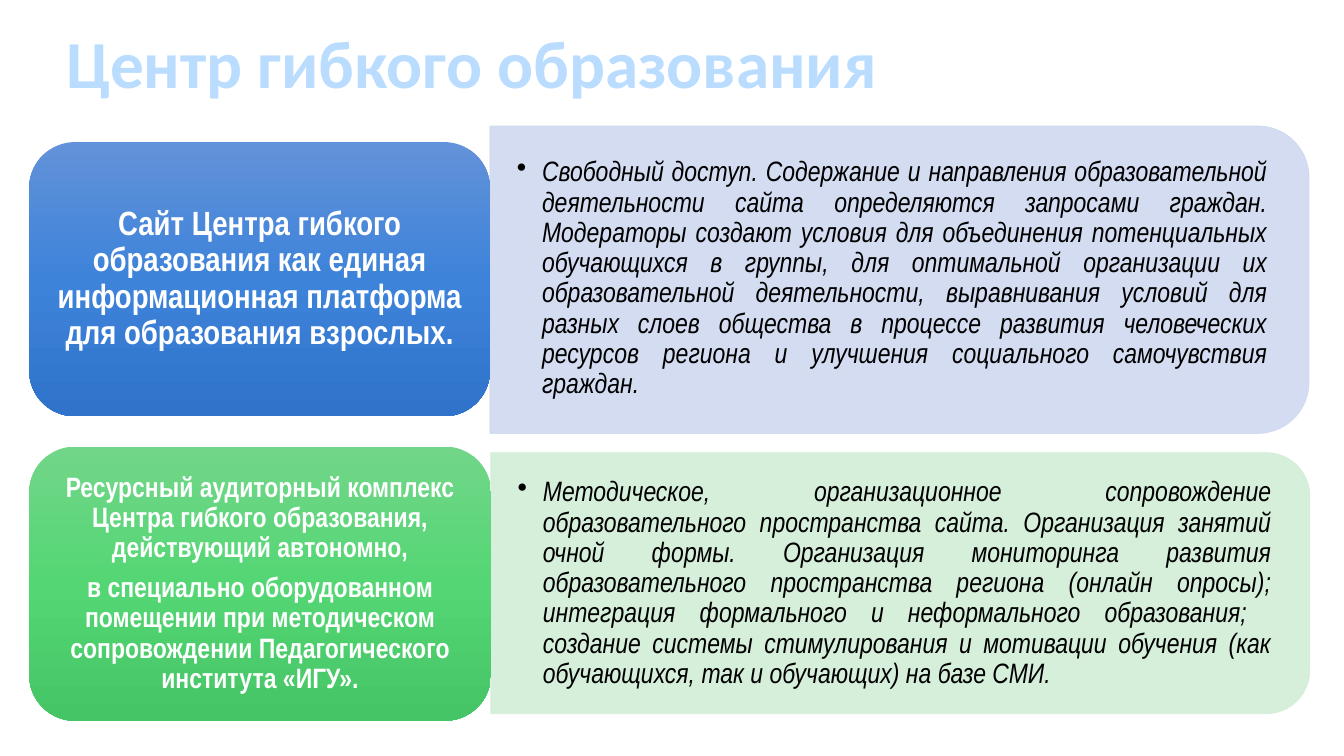
from copy import deepcopy

from lxml.etree import SubElement
from pptx import Presentation
from pptx.dml.color import RGBColor
from pptx.enum.shapes import MSO_SHAPE as Shape
from pptx.enum.text import MSO_ANCHOR as Anchor, PP_ALIGN as Align
from pptx.oxml.ns import qn
from pptx.util import Pt

TITLE_BLUE = RGBColor(0xBA, 0xDD, 0xFF)
WHITE = RGBColor(0xFF, 0xFF, 0xFF)
BLACK = RGBColor(0x00, 0x00, 0x00)
PALE_BLUE = RGBColor(0xCF, 0xD9, 0xEF)
PALE_GREEN = RGBColor(0xD2, 0xEE, 0xD7)
BLUES = [RGBColor(0x62, 0x92, 0xD9), RGBColor(0x3E, 0x83, 0xDA), RGBColor(0x2F, 0x74, 0xCA)]
GREENS = [RGBColor(0x71, 0xD6, 0x88), RGBColor(0x55, 0xD6, 0x75), RGBColor(0x45, 0xC5, 0x65)]

BODY_FONT = "Arial Narrow"
LABEL_LEFT, LABEL_HEIGHT, LABEL_PADDING = 20.9, 195.8, 9.4
PANEL_WIDTH = 585

SITE_LABEL = ["Сайт Центра гибкого образования как единая информационная платформа "
              "для образования взрослых."]
SITE_DETAILS = (
    "Свободный доступ. Содержание и направления образовательной деятельности сайта "
    "определяются запросами граждан. Модераторы создают условия для объединения "
    "потенциальных обучающихся в группы, для оптимальной организации их образовательной "
    "деятельности, выравнивания условий для разных слоев общества в процессе развития "
    "человеческих ресурсов региона и улучшения социального самочувствия граждан.")
COMPLEX_LABEL = [
    "Ресурсный аудиторный комплекс Центра гибкого образования, действующий автономно,",
    "в специально оборудованном помещении при методическом сопровождении "
    "Педагогического института «ИГУ»."]
COMPLEX_DETAILS = (
    "Методическое, организационное сопровождение образовательного пространства сайта. "
    "Организация занятий очной формы. Организация мониторинга развития образовательного "
    "пространства региона (онлайн опросы); интеграция формального и неформального "
    "образования;  создание системы стимулирования и мотивации обучения "
    "(как обучающихся, так и обучающих) на базе СМИ.")


def add_text(page, frame, paragraphs, size, color, align, inset=(7.2, 3.6), after=0,
             font=BODY_FONT, bold=False, italic=False, bullet=False):
    """Add a vertically centred text box."""
    box = page.shapes.add_textbox(*map(Pt, frame))
    text = box.text_frame
    text.word_wrap = True
    text.vertical_anchor = Anchor.MIDDLE
    text.margin_left = text.margin_right = Pt(inset[0])
    text.margin_top = text.margin_bottom = Pt(inset[1])
    for index, wording in enumerate(paragraphs):
        para = text.add_paragraph() if index else text.paragraphs[0]
        para.text = wording
        para.alignment = align
        para.line_spacing = 0.9
        para.space_after = Pt(after)
        if bullet:
            add_bullet(para)
        for span in para.runs:
            span.font.name = font
            span.font.size = Pt(size)
            span.font.bold = bold
            span.font.italic = italic
            span.font.color.rgb = color


def add_bullet(para):
    properties = para._p.get_or_add_pPr()
    properties.set("marL", str(Pt(18)))
    properties.set("indent", str(Pt(-18)))
    SubElement(properties, qn("a:buChar")).set("char", "•")


def add_panel(page, left, top, height, color):
    """Add a pale panel, turned so that its rounded corners face right."""
    turn = (PANEL_WIDTH - height) / 2
    panel = page.shapes.add_shape(Shape.ROUND_2_SAME_RECTANGLE, Pt(left + turn),
                                  Pt(top - turn), Pt(height), Pt(PANEL_WIDTH))
    panel.rotation = 90
    panel.shadow.inherit = False
    panel.fill.solid()
    panel.fill.fore_color.rgb = color
    panel.line.color.rgb = color
    panel.line.width = Pt(0.5)
    for tint in panel._element.spPr.iter(qn("a:srgbClr")):
        SubElement(tint, qn("a:alpha")).set("val", "90000")


def add_label_block(page, top, width, colors):
    """Add a rounded block with a three-stop vertical gradient."""
    block = page.shapes.add_shape(Shape.ROUNDED_RECTANGLE, Pt(LABEL_LEFT), Pt(top),
                                  Pt(width), Pt(LABEL_HEIGHT))
    block.shadow.inherit = False
    block.line.fill.background()
    block.fill.gradient()
    block.fill.gradient_angle = 270
    stop_list = next(block._element.spPr.iter(qn("a:gsLst")))
    stop_list.append(deepcopy(stop_list[-1]))
    for stop, color, position in zip(block.fill.gradient_stops, colors, (0, 0.5, 1)):
        stop.color.rgb = color
        stop.position = position


def add_row(page, panel, panel_color, details, details_frame,
            label_top, label_colors, label, label_size):
    left, top, height = panel
    width = left - LABEL_LEFT
    add_panel(page, left, top, height, panel_color)
    add_text(page, details_frame, [details], 20, BLACK, Align.JUSTIFY,
             inset=(19.2, 9.9), after=3, italic=True, bullet=True)
    add_label_block(page, label_top, width, label_colors)
    label_frame = (LABEL_LEFT + LABEL_PADDING, label_top + LABEL_PADDING,
                   width - 2 * LABEL_PADDING, LABEL_HEIGHT - 2 * LABEL_PADDING)
    add_text(page, label_frame, label, label_size, WHITE, Align.CENTER,
             inset=(6, 3), after=label_size * 0.35, bold=True)


def main():
    deck = Presentation()
    deck.slide_width, deck.slide_height = Pt(960), Pt(540)
    page = deck.slides.add_slide(deck.slide_layouts[6])

    # Heading
    add_text(page, (40.3, 19.4, 828, 57), ["Центр гибкого образования"], 48,
             TITLE_BLUE, Align.LEFT, font="Calibri", bold=True)

    # Website row
    add_row(page, (350, 90, 219.6), PALE_BLUE, SITE_DETAILS, (350, 100, 574.5, 198),
            101.5, BLUES, SITE_LABEL, 24)

    # Resource complex row
    add_row(page, (350.6, 323.3, 186.5), PALE_GREEN, COMPLEX_DETAILS,
            (350.6, 332.6, 576.7, 168.5), 319, GREENS, COMPLEX_LABEL, 20)

    deck.save("out.pptx")


if __name__ == "__main__":
    main()
